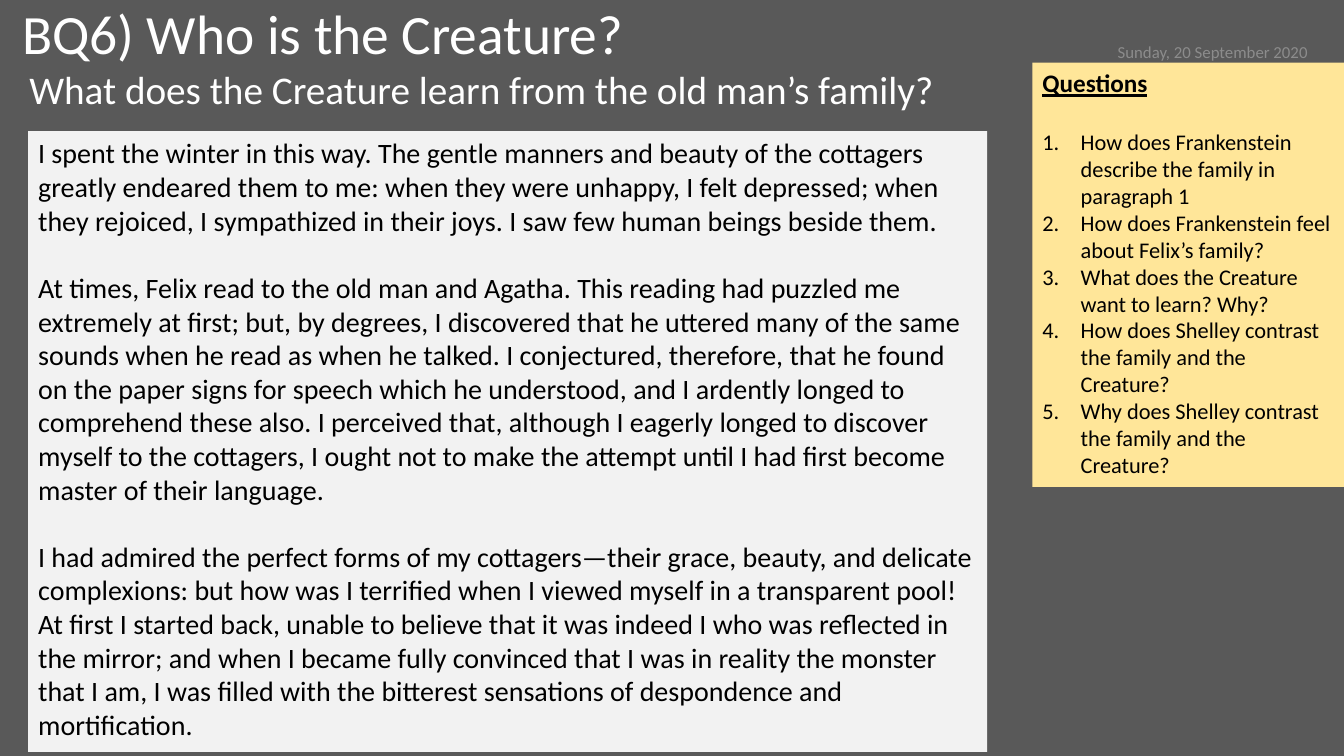
from dataclasses import dataclass

from lxml import etree
from pptx import Presentation
from pptx.dml.color import RGBColor
from pptx.enum.shapes import MSO_SHAPE
from pptx.enum.text import MSO_ANCHOR, MSO_AUTO_SIZE, PP_ALIGN
from pptx.oxml.ns import qn
from pptx.util import Inches, Pt

RECT = MSO_SHAPE.RECTANGLE
TOP, MIDDLE = MSO_ANCHOR.TOP, MSO_ANCHOR.MIDDLE
FIXED, GROW = MSO_AUTO_SIZE.NONE, MSO_AUTO_SIZE.SHAPE_TO_FIT_TEXT
LEFT, RIGHT = PP_ALIGN.LEFT, PP_ALIGN.RIGHT


@dataclass
class Theme:
    font: str = "Calibri"
    back: str = "595959"
    white: str = "FFFFFF"
    black: str = "000000"
    grey: str = "8C8C8C"
    paper: str = "F2F2F2"
    yellow: str = "FFE699"
    title: float = 39.6
    sub: float = 28
    text: float = 20
    head: float = 18
    list: float = 16
    date: float = 12


theme = Theme()


def place(shape, box, anchor, fit):
    """Set the position and frame of a shape; return its text frame."""
    for name, value in zip(("left", "top", "width", "height"), box):
        setattr(shape, name, Inches(value))
    frame = shape.text_frame
    for name, value in {"word_wrap": True, "vertical_anchor": anchor,
                        "auto_size": fit}.items():
        setattr(frame, name, value)
    return frame


def write(frame, texts, size, color, font=None, **form):
    """Add one paragraph per text; return the new paragraphs."""
    paras = []
    for text in texts:
        para = frame.paragraphs[0]
        if para.runs:
            para = frame.add_paragraph()
        run = para.add_run()
        run.text = text
        looks = {"name": theme.font, "size": Pt(size), **(font or {})}
        for name, value in looks.items():
            setattr(run.font, name, value)
        run.font.color.rgb = RGBColor.from_string(color)
        for name, value in {"alignment": LEFT, **form}.items():
            setattr(para, name, value)
        paras.append(para)
    return paras


# Slide
deck = Presentation()
deck.slide_width, deck.slide_height = Inches(13.33), Inches(7.5)
slide = deck.slides.add_slide(deck.slide_layouts[1])
slide.background.fill.solid()
slide.background.fill.fore_color.rgb = RGBColor.from_string(theme.back)

# Title and subtitle
frame = place(slide.shapes.title, (0.12, 0.15, 11.26, 0.42), MIDDLE, FIXED)
write(frame, ["BQ6) Who is the Creature?"], theme.title, theme.white,
      line_spacing=0.9)

frame = place(slide.placeholders[1], (0.19, 0.65, 12.88, 6.5), TOP, FIXED)
sub = write(frame, ["What does the Creature learn from the old man’s family?"],
            theme.sub, theme.white, line_spacing=0.9, space_before=Pt(10))[0]
props = sub._p.get_or_add_pPr()
props.set("marL", "0")
props.set("indent", "0")
etree.SubElement(props, qn("a:buNone"))

# Date
box = slide.shapes.add_textbox(0, 0, 0, 0)
frame = place(box, (10.07, 0.31, 3, 0.4), MIDDLE, FIXED)
write(frame, ["Sunday, 20 September 2020"], theme.date, theme.grey,
      alignment=RIGHT)

# Panels for the extract and the questions
frames = []
for box, fill in (((0.28, 1.3, 9.51, 6.16), theme.paper),
                  ((10.24, 0.62, 3.09, 4.21), theme.yellow)):
    panel = slide.shapes.add_shape(RECT, 0, 0, 0, 0)
    panel.shadow.inherit = False
    panel.fill.solid()
    panel.fill.fore_color.rgb = RGBColor.from_string(fill)
    panel.line.fill.background()
    frames.append(place(panel, box, TOP, GROW))
extract, quiz = frames

# Extract
story = [
    "I spent the winter in this way. The gentle manners and beauty of the "
    "cottagers greatly endeared them to me: when they were unhappy, I felt "
    "depressed; when they rejoiced, I sympathized in their joys. I saw few "
    "human beings beside them.",
    "At times, Felix read to the old man and Agatha. This reading had puzzled "
    "me extremely at first; but, by degrees, I discovered that he uttered many "
    "of the same sounds when he read as when he talked. I conjectured, "
    "therefore, that he found on the paper signs for speech which he "
    "understood, and I ardently longed to comprehend these also. I perceived "
    "that, although I eagerly longed to discover myself to the cottagers, I "
    "ought not to make the attempt until I had first become master of their "
    "language.",
    "I had admired the perfect forms of my cottagers—their grace, beauty, and "
    "delicate complexions: but how was I terrified when I viewed myself in a "
    "transparent pool! At first I started back, unable to believe that it was "
    "indeed I who was reflected in the mirror; and when I became fully "
    "convinced that I was in reality the monster that I am, I was filled with "
    "the bitterest sensations of despondence and mortification.",
]
for para in write(extract, story, theme.text, theme.black)[:-1]:
    para.space_after = Pt(24)

# Questions
write(quiz, ["Questions"], theme.head, theme.black,
      {"bold": True, "underline": True}, space_after=Pt(22))
asks = [
    "How does Frankenstein describe the family in paragraph 1",
    "How does Frankenstein feel about Felix’s family?",
    "What does the Creature want to learn? Why?",
    "How does Shelley contrast the family and the Creature?",
    "Why does Shelley contrast the family and the Creature?",
]
for para in write(quiz, asks, theme.list, theme.black):
    props = para._p.get_or_add_pPr()
    props.set("marL", str(Inches(0.38)))
    props.set("indent", str(-Inches(0.38)))
    etree.SubElement(props, qn("a:buFont"), typeface="+mj-lt")
    etree.SubElement(props, qn("a:buAutoNum"), type="arabicPeriod")

deck.save("out.pptx")
